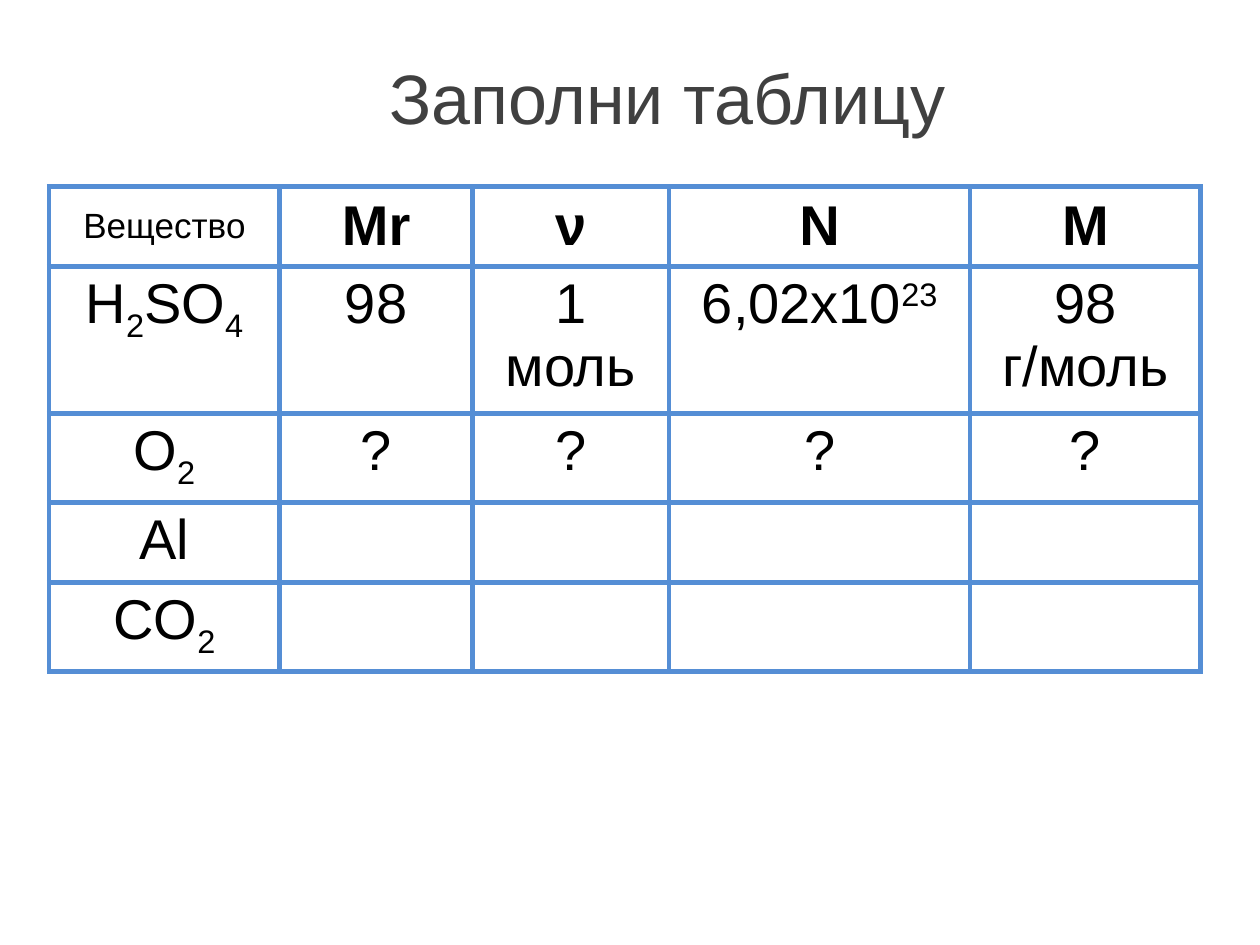
from pptx import Presentation
from pptx.dml.color import RGBColor
from pptx.enum.text import MSO_ANCHOR, PP_ALIGN
from pptx.oxml import parse_xml
from pptx.oxml.ns import nsdecls
from pptx.util import Inches, Pt

BASELINES = {"_": "-25000", "^": "30000"}
COLUMNS = [1.83, 1.53, 1.56, 2.39, 1.83]
ROWS = [0.6, 1.09, 0.67, 0.6, 0.67]
HEADER = ["Вещество", "Mr", "ν", "N", "M"]
SUBSTANCES = [
    [["H", "_2", "SO", "_4"], ["98"], ["1 моль"], ["6,02х10", "^23"], ["98 г/моль"]],
    [["O", "_2"], ["?"], ["?"], ["?"], ["?"]],
    [["Al"], [], [], [], []],
    [["CO", "_2"], [], [], [], []],
]


def rgb(color):
    return RGBColor.from_string(color)


class Deck:
    """Holds the style and the current slide."""

    font = "Arial"
    ink = "000000"
    title_ink = "404040"
    border = "558ED5"
    border_width = 3

    def __init__(self, prs):
        self.s = prs.slides.add_slide(prs.slide_layouts[6])

    def add_runs(self, p, runs, size, color, bold=False):
        p.alignment = PP_ALIGN.CENTER
        for text in runs:
            r = p.add_run()
            r.text = text.lstrip("_^")
            r.font.name = self.font
            r.font.size = Pt(size)
            r.font.bold = bold
            r.font.color.rgb = rgb(color)
            if text[0] in BASELINES:
                r.font._element.set("baseline", BASELINES[text[0]])

    def title(self, text, left, top, width, height):
        sp = self.s.shapes.add_textbox(*map(Inches, (left, top, width, height)))
        tf = sp.text_frame
        tf.word_wrap = True
        tf.vertical_anchor = MSO_ANCHOR.MIDDLE
        tf.margin_left = tf.margin_right = Inches(0.08)
        tf.margin_top = tf.margin_bottom = Inches(0.06)
        p = tf.paragraphs[0]
        p.line_spacing = 0.9
        self.add_runs(p, [text], 40, self.title_ink)

    def outline(self, cell):
        cell.fill.background()
        for i, side in enumerate("LRTB"):
            cell._tc.tcPr.insert(i, parse_xml(
                f'<a:ln{side} {nsdecls("a")} w="{Pt(self.border_width)}"><a:solidFill>'
                f'<a:srgbClr val="{self.border}"/></a:solidFill></a:ln{side}>'))

    def table(self, header, body, left, top):
        sp = self.s.shapes.add_table(
            len(ROWS), len(COLUMNS), Inches(left), Inches(top),
            Inches(sum(COLUMNS)), Inches(sum(ROWS)))
        table = sp.table
        table.first_row = table.horz_banding = False
        for column, width in zip(table.columns, COLUMNS):
            column.width = Inches(width)
        for row, height in zip(table.rows, ROWS):
            row.height = Inches(height)
        for cell in table.iter_cells():
            self.outline(cell)
        for j, text in enumerate(header):
            cell = table.cell(0, j)
            cell.vertical_anchor = MSO_ANCHOR.MIDDLE
            self.add_runs(cell.text_frame.paragraphs[0], [text],
                          32 if j else 20, self.ink, bold=j > 0)
        for i, row in enumerate(body, 1):
            for j, runs in enumerate(row):
                p = table.cell(i, j).text_frame.paragraphs[0]
                self.add_runs(p, runs, 32, self.ink)


def main():
    prs = Presentation()
    prs.slide_width, prs.slide_height = Inches(10), Inches(7.5)
    deck = Deck(prs)
    deck.title("Заполни таблицу", 1.95, 0.47, 6.69, 0.67)
    deck.table(HEADER, SUBSTANCES, 0.39, 1.48)
    prs.save("out.pptx")


if __name__ == "__main__":
    main()
